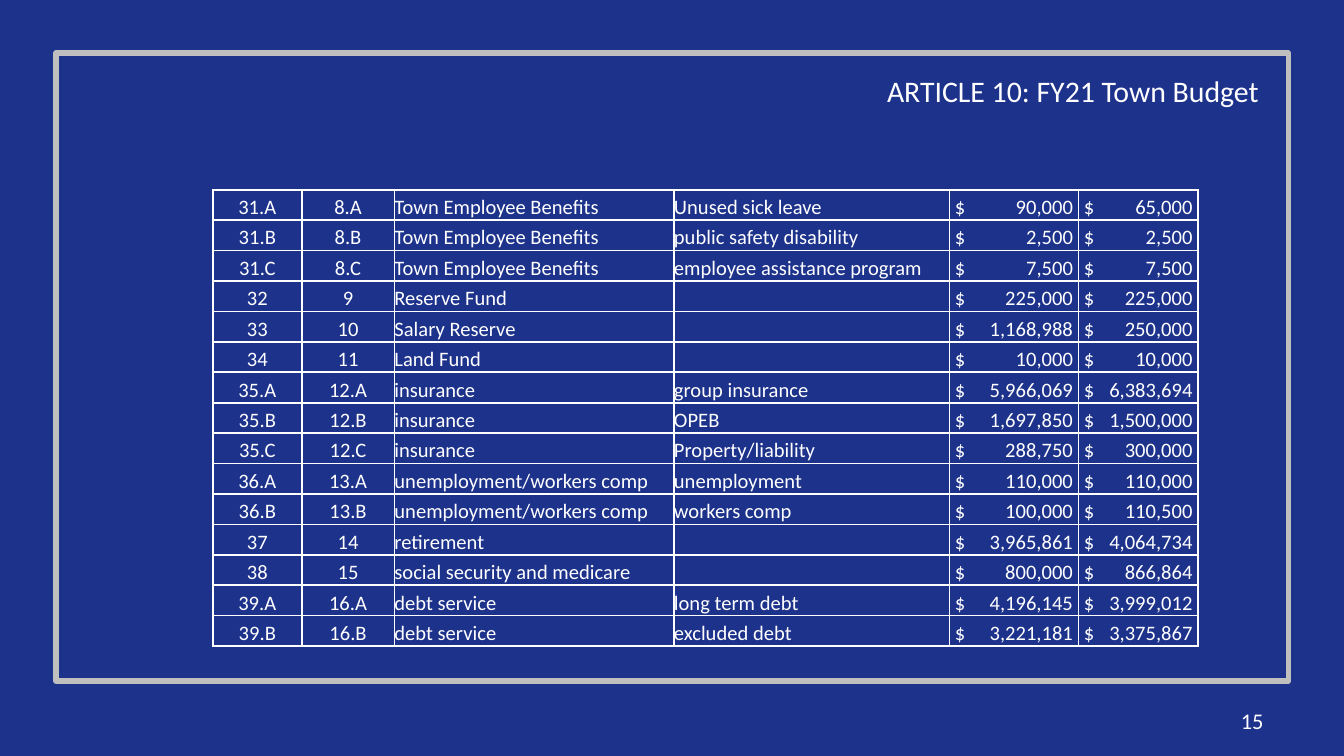
"""Build the Article 10 town budget slide."""
from typing import NamedTuple

from lxml.etree import SubElement
from pptx import Presentation
from pptx.dml.color import RGBColor
from pptx.enum.shapes import MSO_SHAPE
from pptx.enum.text import MSO_ANCHOR, PP_ALIGN
from pptx.oxml import parse_xml
from pptx.oxml.ns import nsdecls, qn
from pptx.util import Inches, Pt

WIDTH = Inches(10)
HEIGHT = WIDTH * 9 // 16
NAVY, WHITE, SILVER = "1D328B", "FFFFFF", "BFBFBF"
FONT = "Calibri"
MONEY_INSET = 0.4
COLUMN_SHARES = (6.6, 6.9, 20.8, 20.5, 9.6, 8.9)


class Area(NamedTuple):
    """A rectangle in percent of the slide's width and height."""
    left: float
    top: float
    width: float
    height: float


class BudgetLine(NamedTuple):
    """One row of the budget table."""
    item: str
    account: str
    category: str
    detail: str
    first_amount: int
    second_amount: int


FRAME = Area(4.17, 7.05, 91.7, 83)
TITLE = Area(65, 8.71, 30, 6.58)
TABLE = Area(15.85, 25.1, sum(COLUMN_SHARES), 60.44)
PAGE_NUMBER = Area(71.7, 92.7, 23.3, 5.33)

BUDGET = (
    BudgetLine("31.A", "8.A", "Town Employee Benefits", "Unused sick leave", 90000, 65000),
    BudgetLine("31.B", "8.B", "Town Employee Benefits", "public safety disability", 2500, 2500),
    BudgetLine("31.C", "8.C", "Town Employee Benefits", "employee assistance program", 7500, 7500),
    BudgetLine("32", "9", "Reserve Fund", "", 225000, 225000),
    BudgetLine("33", "10", "Salary Reserve", "", 1168988, 250000),
    BudgetLine("34", "11", "Land Fund", "", 10000, 10000),
    BudgetLine("35.A", "12.A", "insurance", "group insurance", 5966069, 6383694),
    BudgetLine("35.B", "12.B", "insurance", "OPEB", 1697850, 1500000),
    BudgetLine("35.C", "12.C", "insurance", "Property/liability", 288750, 300000),
    BudgetLine("36.A", "13.A", "unemployment/workers comp", "unemployment", 110000, 110000),
    BudgetLine("36.B", "13.B", "unemployment/workers comp", "workers comp", 100000, 110500),
    BudgetLine("37", "14", "retirement", "", 3965861, 4064734),
    BudgetLine("38", "15", "social security and medicare", "", 800000, 866864),
    BudgetLine("39.A", "16.A", "debt service", "long term debt", 4196145, 3999012),
    BudgetLine("39.B", "16.B", "debt service", "excluded debt", 3221181, 3375867),
)


def color(value: str) -> RGBColor:
    """Turn a hex string into a colour."""
    return RGBColor.from_string(value)


def across(share: float) -> int:
    """Turn a percentage of the slide's width into a length."""
    return round(WIDTH * share / 100)


def down(share: float) -> int:
    """Turn a percentage of the slide's height into a length."""
    return round(HEIGHT * share / 100)


def bounds(area: Area) -> tuple[int, int, int, int]:
    """Give the left, top, width and height of an area as lengths."""
    return across(area.left), down(area.top), across(area.width), down(area.height)


def write(paragraph, text: str, size: float, alignment=PP_ALIGN.LEFT) -> None:
    """Add one white run to a paragraph."""
    paragraph.alignment = alignment
    span = paragraph.add_run()
    span.text = text
    span.font.name = FONT
    span.font.size = Pt(size)
    span.font.color.rgb = color(WHITE)


def draw_title(page, text: str) -> None:
    """Place and format the title placeholder."""
    title = page.shapes.title
    title.left, title.top, title.width, title.height = bounds(TITLE)
    title.text_frame.word_wrap = True
    title.text_frame.vertical_anchor = MSO_ANCHOR.TOP
    write(title.text_frame.paragraphs[0], text, 16)


def draw_frame(page) -> None:
    """Draw the silver outline around the content."""
    frame = page.shapes.add_shape(MSO_SHAPE.RECTANGLE, *bounds(FRAME))
    frame.shadow.inherit = False
    frame.fill.background()
    frame.line.color.rgb = color(SILVER)
    frame.line.width = Pt(3)


def draw_page_number(page, number: int) -> None:
    """Write the page number at the lower right."""
    box = page.shapes.add_textbox(*bounds(PAGE_NUMBER))
    box.text_frame.word_wrap = True
    box.text_frame.vertical_anchor = MSO_ANCHOR.MIDDLE
    write(box.text_frame.paragraphs[0], str(number), 12, PP_ALIGN.RIGHT)


def style_cell(cell) -> None:
    """Clear a cell's fill and margins and give it white borders."""
    cell.fill.background()
    cell.vertical_anchor = MSO_ANCHOR.BOTTOM
    cell.margin_left = cell.margin_right = cell.margin_top = cell.margin_bottom = 0
    properties = cell._tc.get_or_add_tcPr()
    for index, side in enumerate(("lnL", "lnR", "lnT", "lnB")):
        properties.insert(index, parse_xml(
            f'<a:{side} {nsdecls("a")} w="{Pt(1)}"><a:solidFill>'
            f'<a:srgbClr val="{WHITE}"/></a:solidFill></a:{side}>'))


def write_amount(cell, amount: int, column_share: float) -> None:
    """Write a dollar sign at the left and the amount at a right tab."""
    cell.margin_left = across(MONEY_INSET)
    paragraph = cell.text_frame.paragraphs[0]
    tabs = SubElement(paragraph._p.get_or_add_pPr(), qn("a:tabLst"))
    position = across(column_share - 2 * MONEY_INSET)
    SubElement(tabs, qn("a:tab"), pos=str(position), algn="r")
    write(paragraph, f"$\t{amount:,}", 11)


def fill_cell(cell, value: str | int, column: int) -> None:
    """Write a label or an amount into a cell."""
    style_cell(cell)
    paragraph = cell.text_frame.paragraphs[0]
    if isinstance(value, int):
        write_amount(cell, value, COLUMN_SHARES[column])
    elif value:
        write(paragraph, value, 11, PP_ALIGN.CENTER if column < 2 else PP_ALIGN.LEFT)
    else:
        SubElement(paragraph._p, qn("a:endParaRPr"), sz="1100")


def draw_budget(page) -> None:
    """Draw the budget table."""
    table = page.shapes.add_table(len(BUDGET), len(COLUMN_SHARES), *bounds(TABLE)).table
    table.first_row = table.horz_banding = False
    for column, share in zip(table.columns, COLUMN_SHARES):
        column.width = across(share)
    for row, line in enumerate(BUDGET):
        for column, value in enumerate(line):
            fill_cell(table.cell(row, column), value, column)


def main() -> None:
    """Build and save the deck."""
    deck = Presentation()
    deck.slide_width, deck.slide_height = WIDTH, HEIGHT
    page = deck.slides.add_slide(deck.slide_layouts[5])
    page.background.fill.solid()
    page.background.fill.fore_color.rgb = color(NAVY)
    draw_frame(page)
    draw_page_number(page, 15)
    draw_title(page, "ARTICLE 10: FY21 Town Budget")
    draw_budget(page)
    deck.save("out.pptx")


if __name__ == "__main__":
    main()
